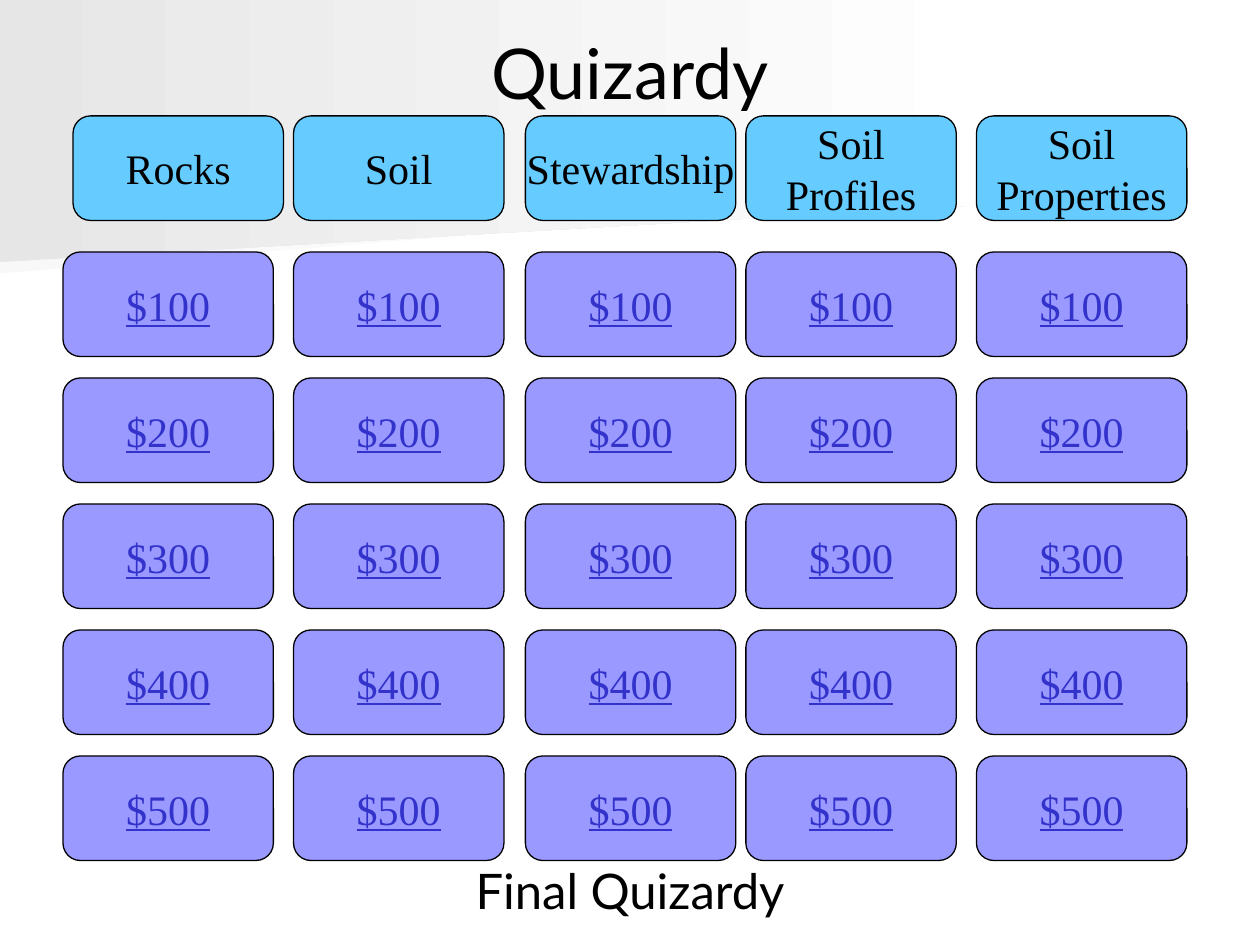
"""Build a quiz board slide with five topics and five prize rows."""
import pptx
import pptx.dml.color
import pptx.enum.shapes
import pptx.enum.text
import pptx.util

Inches = pptx.util.Inches
COLORS = {
    "ink": "000000", "link": "3333CC", "topic": "66CCFF", "prize": "9999FF",
    "pale": "F8F8F8", "gray": "E6E6E6", "white": "FFFFFF",
}
TOPICS = ["Rocks", "Soil", "Stewardship", "Soil\nProfiles", "Soil\nProperties"]
PRIZES = ["$100", "$200", "$300", "$400", "$500"]
COLS = [0, 1.83, 3.67, 5.42, 7.25]
CARD = (1.67, 0.83)
HEAD = {"name": "Lato", "size": pptx.util.Pt(40)}
FOOT = {"name": "Lato", "size": pptx.util.Pt(28)}
TOPIC = {"name": "Times New Roman", "size": pptx.util.Pt(24)}
PRIZE = {**TOPIC, "underline": True}


def rgb(key):
    """Return the named colour."""
    return pptx.dml.color.RGBColor.from_string(COLORS[key])


def write(shape, text, style, color, wrap):
    """Set centred text in a shape, one paragraph a line."""
    frame = shape.text_frame
    layout = {
        "text": text, "word_wrap": wrap,
        "vertical_anchor": pptx.enum.text.MSO_ANCHOR.MIDDLE,
    }
    for name, value in layout.items():
        setattr(frame, name, value)
    for para in frame.paragraphs:
        para.alignment = pptx.enum.text.PP_ALIGN.CENTER
        font = para.runs[0].font
        for name, value in style.items():
            setattr(font, name, value)
        font.color.rgb = rgb(color)


def band(slide, box, right, left, shade):
    """Draw a fading band whose lower edge slopes from right to left."""
    x, y, width, height = box
    points = [(0, left), (0, 0), (width, 0)]
    build = slide.shapes.build_freeform(Inches(x + width), Inches(y + right))
    build.add_line_segments(
        [(Inches(x + dx), Inches(y + dy)) for dx, dy in points], close=True)
    shape = build.convert_to_shape()
    shape.shadow.inherit = False
    shape.line.fill.background()
    shape.fill.gradient()
    shape.fill.gradient_angle = 0
    for stop, key in zip(shape.fill.gradient_stops, (shade, "white")):
        stop.color.rgb = rgb(key)


def label(slide, box, text, style):
    """Place a line of text in the box."""
    shape = slide.shapes.add_textbox(*map(Inches, box))
    write(shape, text, style, "ink", True)


def card(slide, box, text, style, fill, color):
    """Place a rounded card in the box."""
    kind = pptx.enum.shapes.MSO_SHAPE.FLOWCHART_ALTERNATE_PROCESS
    shape = slide.shapes.add_shape(kind, *map(Inches, box))
    shape.shadow.inherit = False
    shape.fill.solid()
    shape.fill.fore_color.rgb = rgb(fill)
    shape.line.color.rgb = rgb("ink")
    shape.line.width = pptx.util.Pt(0.75)
    write(shape, text, style, color, False)


def board(slide, left, top):
    """Lay out the topic row and the prize grid from the given corner."""
    for col, (dx, topic) in enumerate(zip(COLS, TOPICS)):
        shift = 0.08 if col == 0 else 0
        card(slide, (left + dx + shift, top, *CARD), topic, TOPIC, "topic", "ink")
        for row, prize in enumerate(PRIZES):
            box = (left + dx, top + 1.08 + row, *CARD)
            card(slide, box, prize, PRIZE, "prize", "link")


def main():
    """Build and save the slide."""
    deck = pptx.Presentation()
    deck.slide_width, deck.slide_height = Inches(10), Inches(7.5)
    slide = deck.slides.add_slide(deck.slide_layouts[6])
    band(slide, (0, 1.01, 7.79, 1.16), 0.52, 1.16, "pale")
    band(slide, (0, 0, 7.92, 2.08), 1.62, 2.08, "gray")
    label(slide, (0.5, 0.3, 9, 0.53), "Quizardy", HEAD)
    board(slide, 0.5, 0.92)
    label(slide, (0.5, 6.8, 9, 0.53), "Final Quizardy", FOOT)
    deck.save("out.pptx")


if __name__ == "__main__":
    main()
